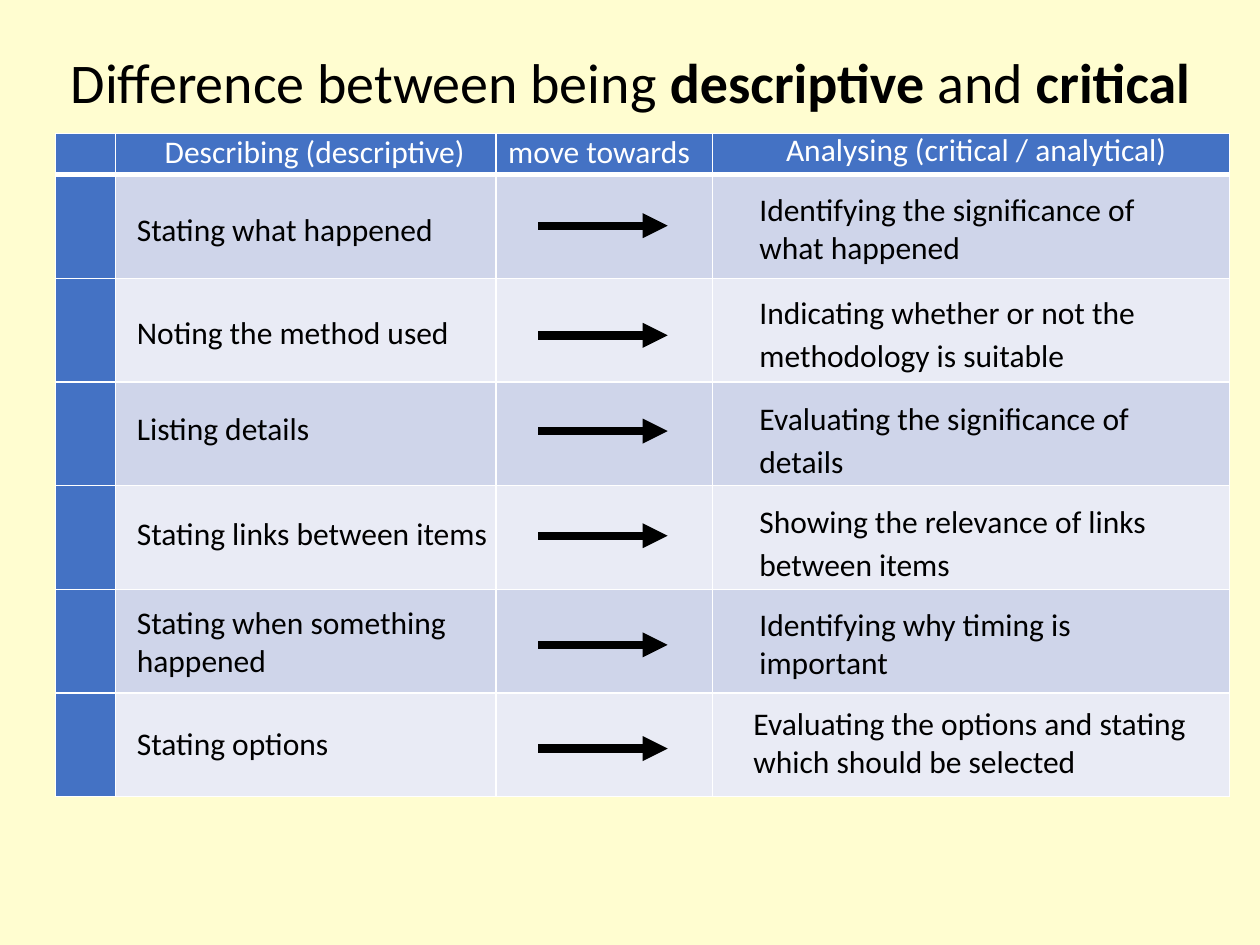
from lxml.etree import SubElement as Sub
from pptx import Presentation
from pptx.dml.color import RGBColor
from pptx.enum.shapes import MSO_CONNECTOR as Link
from pptx.enum.text import MSO_ANCHOR as Anchor, MSO_AUTO_SIZE as Auto, PP_ALIGN as Align
from pptx.oxml.ns import qn
from pptx.util import Cm, Pt

# Content: lengths in cm
TITLE = [("Difference between being ", False), ("descriptive", True),
         (" and ", False), ("critical", True)]
# text, left, top, width
HEADS = [("Describing (descriptive)", 2.51, 2.54, 7.67),
         ("move towards ", 9.32, 2.54, 5.66),
         ("Analysing (critical / analytical)", 14.55, 2.49, 10.26)]
# text, left, top, width, height, loose spacing, wrap
NOTES = [
    ("Stating what happened", 2.51, 4.11, 6.81, 1.02, False, True),
    ("Noting the method used", 2.51, 6.07, 8.51, 1.09, True, True),
    ("Listing details", 2.51, 8.13, 4.06, 1.02, False, True),
    ("Stating links between items", 2.51, 10.13, 7.67, 1.09, True, False),
    ("Stating when something happened", 2.51, 12.04, 7.06, 1.8, False, True),
    ("Stating options", 2.51, 14.48, 4.45, 1.02, False, True),
    ("Identifying the significance of what happened", 15.06, 3.71, 8.51, 1.8, False, True),
    ("Indicating whether or not the methodology is suitable", 15.06, 5.66, 9.12, 2.03, True, True),
    ("Evaluating the significance of details", 15.06, 7.8, 9.7, 2.03, True, True),
    ("Showing the relevance of links between items", 15.06, 9.88, 9.73, 1.98, True, True),
    ("Identifying why timing is important", 15.06, 12.07, 7.01, 1.8, False, True),
    ("Evaluating the options and stating which should be selected",
     14.94, 14.07, 9.63, 1.8, False, True),
]
ARROWS = [4.55, 6.76, 8.69, 10.8, 13, 15.09]
COLS = [1.21, 7.67, 4.36, 10.43]
ROWS = [0.83] + [2.09] * 6
BLUE, BANDS = "4472C4", ("E9EBF5", "CFD5EA")
LOOSE = {"line_spacing": 1.15, "space_after": Pt(10)}


def rgb(code):
    return RGBColor.from_string(code)


def style(item, form):
    for name, val in form.items():
        setattr(item, name, val)


def write(par, text, size, color, bold=False):
    run = par.add_run()
    run.text = text
    style(run.font, {"name": "Calibri", "size": Pt(size), "bold": bold})
    run.font.color.rgb = rgb(color)


def label(text, x, y, w, h, color, form, wrap=True):
    frame = slide.shapes.add_textbox(Cm(x), Cm(y), Cm(w), Cm(h)).text_frame
    style(frame, {"word_wrap": wrap, "auto_size": Auto.SHAPE_TO_FIT_TEXT})
    par = frame.paragraphs[0]
    style(par, form)
    write(par, text, 18, color)


def edge(props, side, width):
    line = Sub(props, qn("a:ln" + side), w=str(Pt(width)))
    Sub(Sub(line, qn("a:solidFill")), qn("a:srgbClr"), val="FFFFFF")


deck = Presentation()
style(deck, {"slide_width": Cm(25.4), "slide_height": Cm(19.05)})
slide = deck.slides.add_slide(deck.slide_layouts[5])
back = slide.background.fill
back.solid()
back.fore_color.rgb = rgb("FFFDD0")

# Title
title = slide.shapes.title
style(title, {"left": Cm(0.71), "top": Cm(0.53), "width": Cm(24), "height": Cm(2.39)})
style(title.text_frame, {"vertical_anchor": Anchor.MIDDLE, "word_wrap": True,
                         "auto_size": Auto.NONE})
head = title.text_frame.paragraphs[0]
style(head, {"alignment": Align.CENTER, "line_spacing": 0.9})
for text, bold in TITLE:
    write(head, text, 32, "000000", bold)

# Banded table
grid = slide.shapes.add_table(len(ROWS), len(COLS), Cm(1.12), Cm(2.69),
                              Cm(sum(COLS)), Cm(sum(ROWS))).table
for col, width in zip(grid.columns, COLS):
    col.width = Cm(width)
for r, height in enumerate(ROWS):
    grid.rows[r].height = Cm(height)
    for c in range(len(COLS)):
        cell = grid.cell(r, c)
        style(cell, {"margin_top": 0, "margin_bottom": 0})
        props = cell._tc.get_or_add_tcPr()
        for side in "LRTB":
            thick = (r, side) in ((0, "B"), (1, "T"))
            edge(props, side, 3 if thick else 1)
        cell.fill.solid()
        cell.fill.fore_color.rgb = rgb(BLUE if r == 0 or c == 0 else BANDS[r % 2])

# Headings and notes
for text, x, y, w in HEADS:
    label(text, x, y, w, 1.02, "FFFFFF", {"alignment": Align.CENTER})
for text, x, y, w, h, loose, wrap in NOTES:
    label(text, x, y, w, h, "000000", LOOSE if loose else {}, wrap)

# Arrows
for y in ARROWS:
    arrow = slide.shapes.add_connector(Link.STRAIGHT, Cm(10.85), Cm(y), Cm(13.46), Cm(y))
    arrow.line.width = Pt(4.75)
    arrow.line.color.rgb = rgb("000000")
    Sub(arrow.line._get_or_add_ln(), qn("a:tailEnd"), type="triangle")
    Sub(arrow._element.spPr, qn("a:effectLst"))

deck.save("out.pptx")
